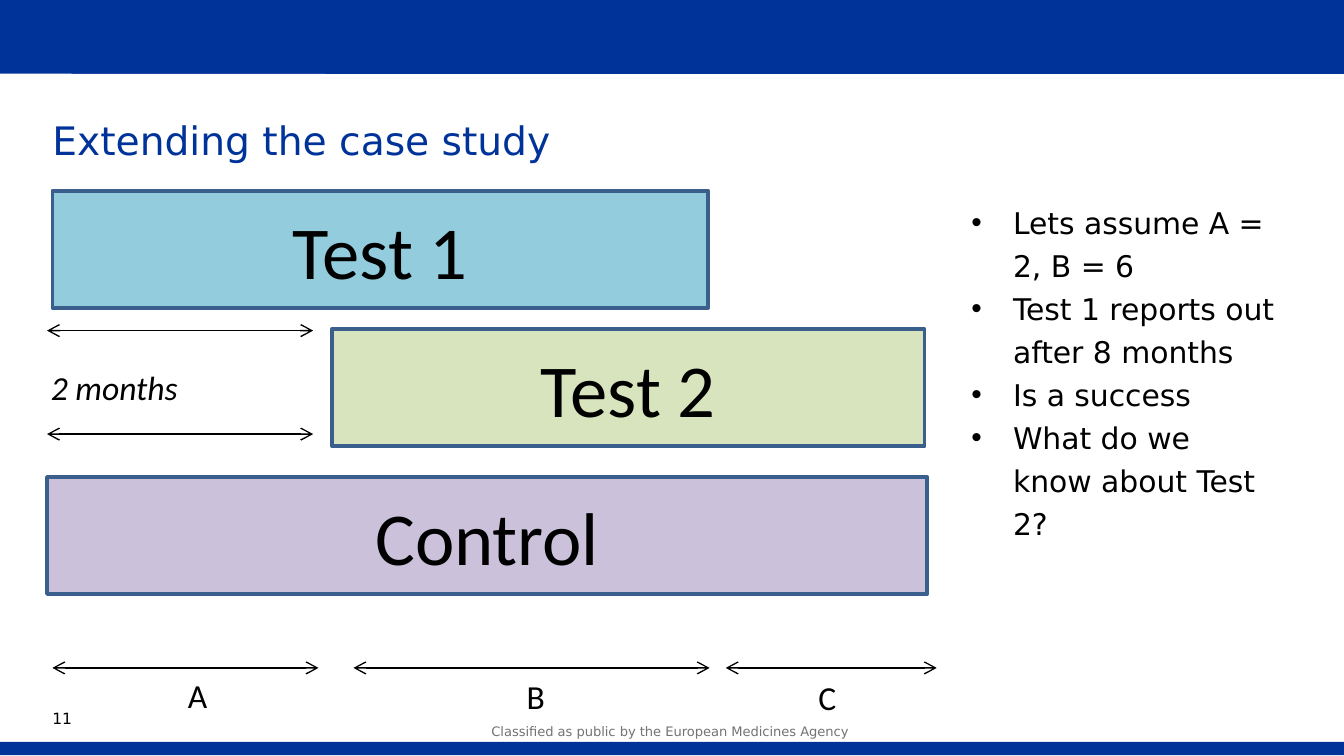
from lxml import etree
from pptx import Presentation
from pptx import util as u
from pptx.dml.color import RGBColor
from pptx.enum import shapes, text
from pptx.oxml import ns

NAVY = RGBColor(0x00, 0x33, 0x99)
OUTLINE = RGBColor(0x3A, 0x5F, 0x8C)
BLUE = RGBColor(0x93, 0xCD, 0xDD)
GREEN = RGBColor(0xD7, 0xE4, 0xBD)
PURPLE = RGBColor(0xCC, 0xC1, 0xDA)
GREY = RGBColor(0x73, 0x73, 0x73)
BLACK = RGBColor(0, 0, 0)
WHITE = RGBColor(0xFF, 0xFF, 0xFF)
BODY_FONT = "DejaVu Sans"
DIAGRAM_FONT = "Calibri"


class SlideBuilder:
    """Holds the slide and draws its elements in one style."""

    def __init__(self, slide):
        self.slide = slide

    def style(self, paragraph, size, font=DIAGRAM_FONT, color=BLACK, spacing=None, italic=None):
        paragraph.font.size = u.Pt(size)
        paragraph.font.name = font
        paragraph.font.color.rgb = color
        paragraph.font.italic = italic
        if spacing:
            paragraph.line_spacing = spacing

    def clear_insets(self, frame):
        frame.margin_left = frame.margin_right = frame.margin_top = frame.margin_bottom = 0

    def title(self, wording, box):
        title = self.slide.shapes.title
        title.left, title.top, title.width, title.height = map(u.Inches, box)
        frame = title.text_frame
        frame.text = wording
        frame.auto_size = text.MSO_AUTO_SIZE.NONE
        frame.vertical_anchor = text.MSO_ANCHOR.TOP
        self.clear_insets(frame)
        frame.paragraphs[0].alignment = text.PP_ALIGN.LEFT
        self.style(frame.paragraphs[0], 21, BODY_FONT, NAVY, u.Pt(27))

    def bar(self, box, fill, wording="", outline=None):
        shape = self.slide.shapes.add_shape(shapes.MSO_SHAPE.RECTANGLE, *map(u.Inches, box))
        shape.shadow.inherit = False
        shape.fill.solid()
        shape.fill.fore_color.rgb = fill
        if outline:
            shape.line.color.rgb = outline
            shape.line.width = u.Pt(2)
        else:
            shape.line.fill.background()
        if wording:
            frame = shape.text_frame
            frame.text = wording
            frame.vertical_anchor = text.MSO_ANCHOR.MIDDLE
            frame.paragraphs[0].alignment = text.PP_ALIGN.CENTER
            self.style(frame.paragraphs[0], 40)

    def label(self, wording, box, size, insets=True, align=None, **style):
        frame = self.slide.shapes.add_textbox(*map(u.Inches, box)).text_frame
        frame.word_wrap = True
        frame.text = wording
        if not insets:
            self.clear_insets(frame)
        frame.paragraphs[0].alignment = align
        self.style(frame.paragraphs[0], size, **style)

    def bullets(self, items, box):
        frame = self.slide.shapes.add_textbox(*map(u.Inches, box)).text_frame
        frame.word_wrap = True
        for index, item in enumerate(items):
            paragraph = frame.add_paragraph() if index else frame.paragraphs[0]
            paragraph.text = item
            properties = paragraph._p.get_or_add_pPr()
            properties.set("marL", str(u.Inches(0.31)))
            properties.set("indent", str(u.Inches(-0.31)))
            etree.SubElement(properties, ns.qn("a:buFont")).set("typeface", "Arial")
            etree.SubElement(properties, ns.qn("a:buChar")).set("char", "•")
            self.style(paragraph, 16, BODY_FONT, spacing=1.2)

    def line(self, start, end, color, width):
        connector = self.slide.shapes.add_connector(
            shapes.MSO_CONNECTOR.STRAIGHT, *map(u.Inches, start + end))
        connector.line.color.rgb = color
        connector.line.width = u.Pt(width)
        etree.SubElement(connector._element.spPr, ns.qn("a:effectLst"))
        return connector

    def span_arrow(self, left, right, y):
        connector = self.line((right, y), (left, y), BLACK, 0.75)
        outline = connector.line._get_or_add_ln()
        for end in ("a:headEnd", "a:tailEnd"):
            etree.SubElement(outline, ns.qn(end)).set("type", "arrow")


def main():
    presentation = Presentation()
    presentation.slide_width = u.Inches(10)
    presentation.slide_height = u.Inches(10 * 9 / 16)
    builder = SlideBuilder(presentation.slides.add_slide(presentation.slide_layouts[5]))

    builder.bar((0, 0, 10, 0.55), NAVY)
    builder.line((0, 0.55), (10, 0.56), WHITE, 0.25)
    builder.bar((0, 5.52, 10, 0.1), NAVY)
    builder.label("Classified as public by the European Medicines Agency",
                  (3.5, 5.36, 2.97, 0.23), 7, insets=False,
                  align=text.PP_ALIGN.CENTER, font=BODY_FONT, color=GREY, spacing=1.2)
    builder.title("Extending the case study", (0.39, 0.84, 9.21, 0.78))
    builder.label("11", (0.39, 5.25, 0.34, 0.2), 8.3, insets=False,
                  font=BODY_FONT, spacing=u.Pt(12))

    for wording, left, top, width, fill in (
        ("Test 2", 2.47, 2.45, 4.41, GREEN),
        ("Test 1", 0.39, 1.42, 4.88, BLUE),
        ("Control", 0.35, 3.55, 6.55, PURPLE),
    ):
        builder.bar((left, top, width, 0.87), fill, wording, OUTLINE)

    for y in (3.23, 2.46):
        builder.span_arrow(0.35, 2.33, y)
    builder.label("2 months", (0.28, 2.68, 2.05, 0.4), 18, italic=True)

    for wording, start, end, left, top in (
        ("A", 0.39, 2.37, 1.3, 4.97),
        ("B", 2.63, 5.28, 3.82, 4.98),
        ("C", 5.4, 6.97, 5.99, 4.99),
    ):
        builder.span_arrow(start, end, 4.97)
        builder.label(wording, (left, top, 0.39, 0.4), 18)

    builder.bullets(("Lets assume A = 2, B = 6", "Test 1 reports out after 8 months",
                     "Is a success", "What do we know about Test 2?"),
                    (7.13, 1.42, 2.46, 2.97))
    presentation.save("out.pptx")


if __name__ == "__main__":
    main()
